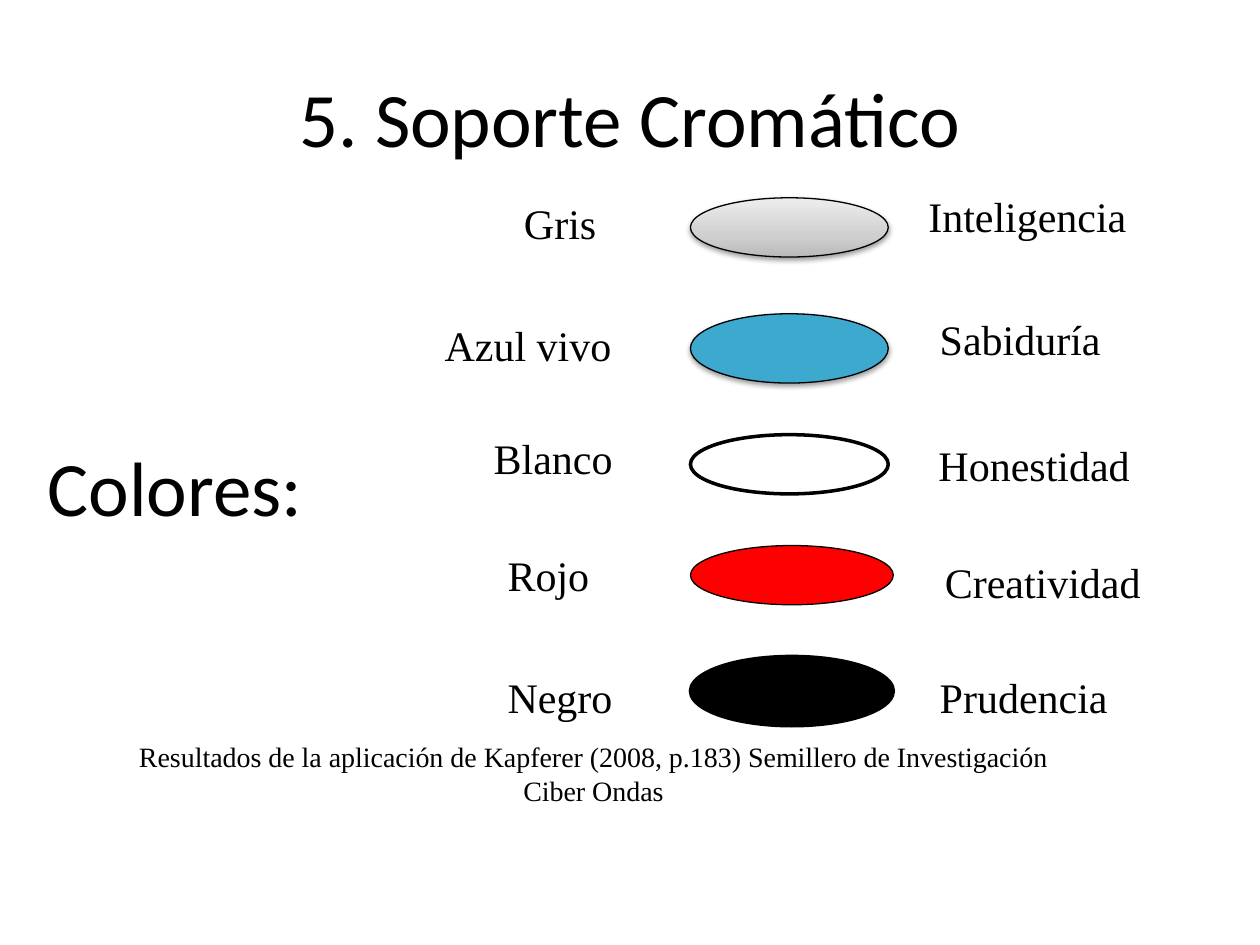
from copy import deepcopy

from lxml.etree import SubElement
from pptx import Presentation
from pptx.dml.color import RGBColor
from pptx.enum.shapes import MSO_SHAPE as Shape
from pptx.enum.text import MSO_ANCHOR as Anchor, MSO_AUTO_SIZE as AutoSize, PP_ALIGN as Align
from pptx.oxml.ns import qn
from pptx.util import Inches, Pt

BLACK = RGBColor(0x00, 0x00, 0x00)
WHITE = RGBColor(0xFF, 0xFF, 0xFF)
BLUE = RGBColor(0x3D, 0xA9, 0xCF)
RED = RGBColor(0xFF, 0x00, 0x00)
GREY_DARK = RGBColor(0xBA, 0xBA, 0xBA)
GREY_MIDDLE = RGBColor(0xCF, 0xCF, 0xCF)
GREY_LIGHT = RGBColor(0xED, 0xED, 0xED)

presentation = Presentation()
presentation.slide_width, presentation.slide_height = Inches(10), Inches(7.5)
slide = presentation.slides.add_slide(presentation.slide_layouts[5])


def add_text(text, left, top, width, height, size=24, font="Times New Roman", align=Align.LEFT):
    box = slide.shapes.add_textbox(Inches(left), Inches(top), Inches(width), Inches(height))
    frame = box.text_frame
    frame.word_wrap = True
    frame.auto_size = AutoSize.SHAPE_TO_FIT_TEXT
    paragraph = frame.paragraphs[0]
    paragraph.text = text
    paragraph.alignment = align
    paragraph.font.size = Pt(size)
    paragraph.font.name = font
    paragraph.font.color.rgb = BLACK


def add_swatch(top, width, height, color, line_width, shadow):
    swatch = slide.shapes.add_shape(
        Shape.OVAL, Inches(5.48), Inches(top), Inches(width), Inches(height))
    swatch.shadow.inherit = False
    swatch.line.color.rgb = BLACK
    swatch.line.width = Pt(line_width)
    properties = swatch._element.spPr
    if color == GREY_MIDDLE:
        swatch.fill.gradient()
        swatch.fill.gradient_angle = 90
        first, last = swatch.fill.gradient_stops
        first.color.rgb, first.position = GREY_MIDDLE, 0.35
        last.color.rgb, last.position = GREY_LIGHT, 1
        stop_list = properties.find(qn("a:gradFill")).find(qn("a:gsLst"))
        stop_list.insert(0, deepcopy(stop_list[0]))
        start = swatch.fill.gradient_stops[0]
        start.color.rgb, start.position = GREY_DARK, 0
    else:
        swatch.fill.solid()
        swatch.fill.fore_color.rgb = color
    if shadow:
        outer = SubElement(
            properties.find(qn("a:effectLst")), qn("a:outerShdw"),
            blurRad=str(Pt(3.1)), dist=str(Pt(1.6)), dir="5400000", rotWithShape="0")
        shadow_color = SubElement(outer, qn("a:srgbClr"), val=str(BLACK))
        SubElement(shadow_color, qn("a:alpha"), val="38000")


title = slide.shapes.title
title.left, title.top, title.width, title.height = (
    Inches(0.5), Inches(0.3), Inches(9), Inches(1.25))
title.text_frame.vertical_anchor = Anchor.MIDDLE
heading = title.text_frame.paragraphs[0]
heading.text = "5. Soporte Cromático"
heading.alignment = Align.CENTER
heading.font.size = Pt(44)
heading.font.name = "Calibri"
heading.font.color.rgb = BLACK

add_text("Colores:", 0.28, 3.44, 2.28, 0.84, size=44, font="Calibri")

swatches = [
    (1.57, 1.57, 0.47, GREY_MIDDLE, 0.75, True),
    (2.49, 1.57, 0.55, BLUE, 0.75, True),
    (3.45, 1.57, 0.47, WHITE, 2, False),
    (4.33, 1.61, 0.47, RED, 0.75, False),
    (5.21, 1.61, 0.55, BLACK, 2, False),
]
for swatch_values in swatches:
    add_swatch(*swatch_values)

labels = [
    ("Gris", 4.06, 1.52, 1.89),
    ("Azul vivo", 3.43, 2.49, 2.05),
    ("Blanco", 3.82, 3.38, 1.27),
    ("Rojo", 3.93, 4.31, 1.18),
    ("Negro", 3.93, 5.28, 1.57),
    ("Inteligencia", 7.27, 1.46, 1.83),
    ("Sabiduría", 7.36, 2.44, 1.74),
    ("Honestidad", 7.35, 3.44, 1.74),
    ("Creatividad", 7.4, 4.37, 1.81),
    ("Prudencia", 7.36, 5.28, 1.58),
]
for text, left, top, width in labels:
    add_text(text, left, top, width, 0.5)

add_text(
    "Resultados de la aplicación de Kapferer (2008, p.183) Semillero de Investigación Ciber Ondas",
    0.97, 5.82, 7.48, 0.64, size=16, align=Align.CENTER)

presentation.save("out.pptx")
